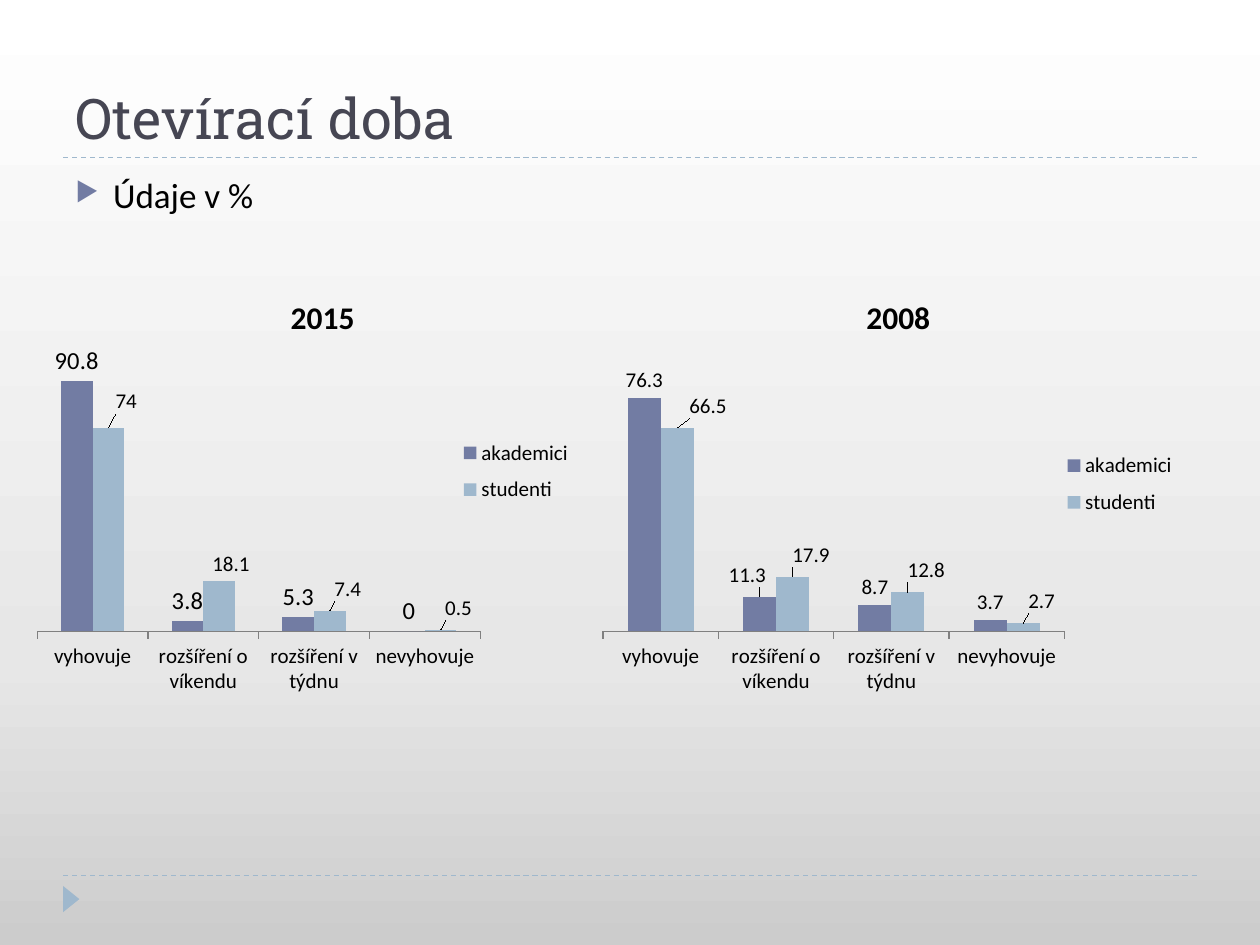
import pptx
import pptx.chart.data
import pptx.dml.color
import pptx.enum.chart
import pptx.enum.dml
import pptx.enum.shapes
import pptx.enum.text
import pptx.oxml
import pptx.oxml.ns
import pptx.util
import copy
from pptx.util import Cm, Pt

COLORS = {
    "title": "464653", "text": "000000", "primary": "727CA3", "secondary": "9FB8CD",
    "axis": "808080", "back_low": "CCCCCC", "back_mid": "E7E7E7", "back_high": "FFFFFF",
}
BODY_FONT = "Calibri"
TITLE_FONT = "Roboto Slab"
CATEGORIES = ["vyhovuje", "rozšíření o víkendu", "rozšíření v týdnu", "nevyhovuje"]

# Label shifts are fractions of the chart size, by point index.
CHARTS = [
    {"title": "2015", "box": (0.51, 5.54, 11.99, 8.61), "maximum": 100,
     "plot": (0.02, 0.19, 0.745, 0.645), "legend": (0.725, 0.36, 0.2, 0.2),
     "series": [
         ("akademici", [90.8, 3.8, 5.3, 0], "primary", 14, {}),
         ("studenti", [74, 18.1, 7.4, 0.5], "secondary", 12,
          {0: (0.03, -0.02), 1: (0.02, 0), 2: (0.03, -0.01), 3: (0.03, -0.01)})]},
    {"title": "2008", "box": (11.91, 5.54, 12.4, 8.61), "maximum": 90,
     "plot": (0.02, 0.19, 0.75, 0.645), "legend": (0.765, 0.39, 0.19, 0.2),
     "series": [
         ("akademici", [76.3, 11.3, 8.7, 3.7], "primary", 12, {1: (-0.02, -0.01)}),
         ("studenti", [66.5, 17.9, 12.8, 2.7], "secondary", 12,
          {0: (0.05, -0.01), 1: (0.03, -0.01), 2: (0.03, -0.01), 3: (0.03, -0.01)})]},
]


def rgb(name):
    return pptx.dml.color.RGBColor.from_string(COLORS[name])


def format_font(font, size, color="text", name=BODY_FONT, bold=False):
    font.size, font.name, font.bold = Pt(size), name, bold
    font.color.rgb = rgb(color)


def write_text(frame, text, **style):
    paragraph = frame.paragraphs[0]
    run = paragraph.add_run()
    run.text = text
    format_font(run.font, **style)
    return paragraph


def set_layout(parent, index, values, inner=False):
    """Place a chart part by fractions: x, y and, if given, width and height."""
    for old in parent.findall(pptx.oxml.ns.qn("c:layout")):
        parent.remove(old)
    parts = '<c:layoutTarget val="inner"/>' if inner else ""
    if len(values) == 4:
        parts += '<c:xMode val="edge"/><c:yMode val="edge"/>'
    parts += "".join(f'<c:{key} val="{value}"/>' for key, value in zip("xywh", values))
    parent.insert(index, pptx.oxml.parse_xml(
        f'<c:layout {pptx.oxml.ns.nsdecls("c")}><c:manualLayout>{parts}'
        "</c:manualLayout></c:layout>"))


class SlideBuilder:
    """Holds the current slide and adds styled elements to it."""

    def __init__(self, presentation):
        self.slide = presentation.slides.add_slide(presentation.slide_layouts[5])

    def background(self, stops):
        fill = self.slide.background.fill
        fill.gradient()
        fill.gradient_angle = 90
        stop_list = self.slide._element.xpath(".//a:gsLst")[0]
        while len(stop_list) < len(stops):
            stop_list.append(copy.deepcopy(stop_list[0]))
        for stop, (position, color) in zip(fill.gradient_stops, stops):
            stop.position = position
            stop.color.rgb = rgb(color)

    def title(self, text, box):
        shape = self.slide.shapes.title
        shape.left, shape.top, shape.width, shape.height = map(Cm, box)
        frame = shape.text_frame
        frame.vertical_anchor = pptx.enum.text.MSO_ANCHOR.BOTTOM
        paragraph = write_text(frame, text, size=32, color="title", name=TITLE_FONT)
        paragraph.alignment = pptx.enum.text.PP_ALIGN.LEFT

    def bullet(self, text, box):
        frame = self.slide.shapes.add_textbox(*map(Cm, box)).text_frame
        frame.word_wrap = True
        paragraph = write_text(frame, text, size=20)
        paragraph.space_before = Pt(6)
        properties = paragraph._p.get_or_add_pPr()
        properties.set("marL", str(Cm(0.76)))
        properties.set("indent", str(-Cm(0.76)))
        namespace = pptx.oxml.ns.nsdecls("a")
        for xml in (f'<a:buClr {namespace}><a:srgbClr val="{COLORS["primary"]}"/></a:buClr>',
                    f'<a:buSzPct {namespace} val="76000"/>',
                    f'<a:buChar {namespace} char="▶"/>'):
            properties.append(pptx.oxml.parse_xml(xml))

    def rule(self, top):
        line = self.slide.shapes.add_connector(
            pptx.enum.shapes.MSO_CONNECTOR.STRAIGHT, Cm(1.27), Cm(top), Cm(24.13), Cm(top))
        line.line.color.rgb = rgb("secondary")
        line.line.width = Pt(0.75)
        line.line.dash_style = pptx.enum.dml.MSO_LINE.DASH
        line._element.spPr.append(
            pptx.oxml.parse_xml(f'<a:effectLst {pptx.oxml.ns.nsdecls("a")}/>'))

    def marker(self, box):
        shape = self.slide.shapes.add_shape(
            pptx.enum.shapes.MSO_SHAPE.ISOSCELES_TRIANGLE, *map(Cm, box))
        shape.rotation = 90
        shape.shadow.inherit = False
        shape.fill.solid()
        shape.fill.fore_color.rgb = rgb("secondary")
        shape.line.fill.background()

    def chart(self, title, box, maximum, plot, legend, series):
        data = pptx.chart.data.CategoryChartData()
        data.categories = CATEGORIES
        for name, values, *_ in series:
            data.add_series(name, values)
        chart = self.slide.shapes.add_chart(
            pptx.enum.chart.XL_CHART_TYPE.COLUMN_CLUSTERED, *map(Cm, box), data).chart
        format_font(chart.font, 10)
        chart.has_title = True
        write_text(chart.chart_title.text_frame, title, size=18, bold=True)
        for overlay in chart._chartSpace.xpath(".//c:title/c:overlay"):
            overlay.set("val", "1")

        chart.has_legend = True
        chart.legend.position = pptx.enum.chart.XL_LEGEND_POSITION.RIGHT
        chart.legend.include_in_layout = False
        format_font(chart.legend.font, 12)
        set_layout(chart.legend._element, 1, legend)
        set_layout(chart._chartSpace.xpath(".//c:plotArea")[0], 0, plot, inner=True)

        axis = chart.category_axis
        axis.major_tick_mark = pptx.enum.chart.XL_TICK_MARK.OUTSIDE
        axis.format.line.color.rgb = rgb("axis")
        format_font(axis.tick_labels.font, 12)
        value_axis = chart.value_axis
        value_axis.visible = False
        value_axis.has_major_gridlines = False
        value_axis.minimum_scale, value_axis.maximum_scale = 0, maximum

        chart.plots[0].gap_width = 150
        chart.plots[0].vary_by_categories = False
        for bars, (_, _, color, size, shifts) in zip(chart.plots[0].series, series):
            self.style_bars(bars, color, size, shifts)

    def style_bars(self, bars, color, size, shifts):
        outside = pptx.enum.chart.XL_LABEL_POSITION.OUTSIDE_END
        bars.format.fill.solid()
        bars.format.fill.fore_color.rgb = rgb(color)
        labels = bars.data_labels
        labels.show_value = True
        labels.position = outside
        format_font(labels.font, size)
        for index in shifts:
            label = bars.points[index].data_label
            format_font(label.font, size)
            label.position = outside
        for element, shift in zip(bars._element.xpath(".//c:dLbl"), shifts.values()):
            set_layout(element, 1, shift)


def main():
    presentation = pptx.Presentation()
    presentation.slide_width, presentation.slide_height = Cm(25.4), Cm(19.05)
    builder = SlideBuilder(presentation)
    builder.background([(0, "back_low"), (0.3, "back_mid"), (1, "back_high")])
    for top in (17.65, 3.18):
        builder.rule(top)
    builder.marker((1.17, 17.96, 0.53, 0.33))
    builder.title("Otevírací doba", (1.27, 0.43, 22.86, 2.74))
    builder.bullet("Údaje v %", (1.27, 3.38, 22.86, 13.72))
    for chart in CHARTS:
        builder.chart(**chart)
    presentation.save("out.pptx")


if __name__ == "__main__":
    main()
